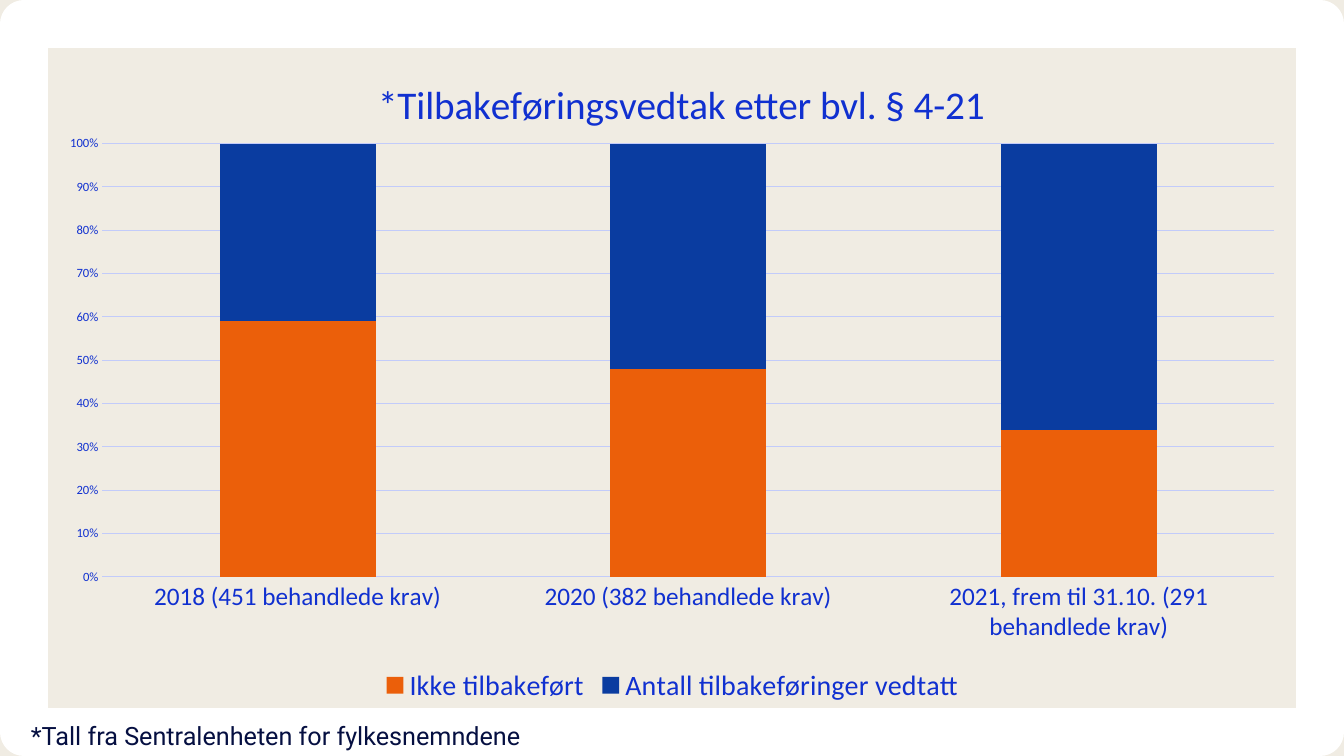
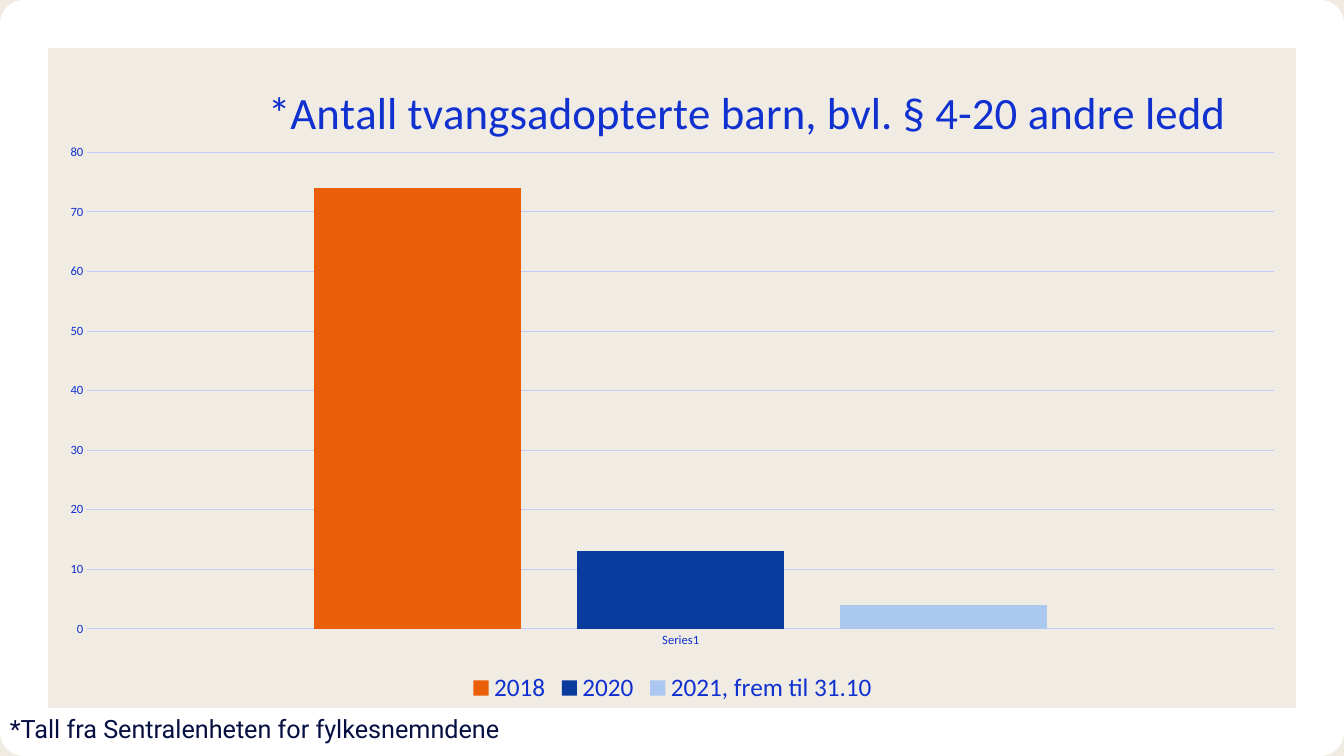
from dataclasses import dataclass

from lxml import etree
from pptx import Presentation
from pptx.chart.data import CategoryChartData
from pptx.dml.color import RGBColor
from pptx.enum.chart import XL_CHART_TYPE as ChartType
from pptx.enum.chart import XL_LEGEND_POSITION as LegendPosition
from pptx.enum.chart import XL_TICK_MARK as TickMark
from pptx.enum.shapes import MSO_SHAPE as Preset
from pptx.enum.text import MSO_AUTO_SIZE as AutoSize
from pptx.oxml.ns import qn
from pptx.util import Cm, Pt


@dataclass(frozen=True)
class Theme:
    paper: RGBColor = RGBColor.from_string("F0ECE3")
    frame: RGBColor = RGBColor.from_string("FFFFFF")
    ink: RGBColor = RGBColor.from_string("050F41")
    label: RGBColor = RGBColor.from_string("1030D0")
    grid: RGBColor = RGBColor.from_string("C2CBFA")
    series: tuple = tuple(map(RGBColor.from_string, ("EB5F0A", "0A3CA0", "AAC8F0")))
    chart_font: str = "Calibri"
    note_font: str = "Roboto"
    tick_size: int = 9
    note_size: int = 18
    frame_width: int = 34
    hairline: float = 0.75


@dataclass(frozen=True)
class Box:
    left: int
    top: int
    width: int = 0
    height: int = 0


@dataclass(frozen=True)
class ChartPage:
    """What one chart slide says; title_box and plot_box are relative to the chart."""
    kind: ChartType
    title: str
    categories: tuple
    series: dict
    gap: int
    overlap: int
    number_format: str
    title_size: int
    category_size: int
    legend_size: int
    title_box: Box
    plot_box: Box
    note_box: Box


THEME = Theme()
SLIDE = Box(0, 0, Cm(33.87), Cm(19.05))
CHART = Box(Cm(1.15), Cm(1.2), Cm(31.6), Cm(16.65))
NOTE = "*Tall fra Sentralenheten for fylkesnemndene"

PAGES = (
    ChartPage(
        kind=ChartType.COLUMN_STACKED_100,
        title="*Tilbakeføringsvedtak etter bvl. § 4-21",
        categories=(
            "2018 (451 behandlede krav)",
            "2020 (382 behandlede krav)",
            "2021, frem til 31.10. (291 behandlede krav)",
        ),
        series={
            "Ikke tilbakeført": (59, 48, 34),
            "Antall tilbakeføringer vedtatt": (41, 52, 66),
        },
        gap=150, overlap=100, number_format="0%",
        title_size=28, category_size=18, legend_size=20,
        title_box=Box(Cm(8.2), Cm(0.6)),
        plot_box=Box(Cm(1.43), Cm(2.42), Cm(29.53), Cm(10.92)),
        note_box=Box(Cm(0.53), Cm(18.03), Cm(16.95), Cm(1.02)),
    ),
    ChartPage(
        kind=ChartType.COLUMN_CLUSTERED,
        title="*Antall tvangsadopterte barn, bvl. § 4-20 andre ledd",
        categories=("Series1",),
        series={"2018": (74,), "2020": (13,), "2021, frem til 31.10": (4,)},
        gap=219, overlap=-27, number_format="General",
        title_size=32, category_size=9, legend_size=18,
        title_box=Box(Cm(5.4), Cm(0.65)),
        plot_box=Box(Cm(1.05), Cm(2.64), Cm(29.91), Cm(12.01)),
        note_box=Box(Cm(0), Cm(17.86), Cm(16.95), Cm(1.02)),
    ),
)


def style_font(font, size, color=THEME.label, name=THEME.chart_font):
    font.size = Pt(size)
    font.name = name
    font.bold = False
    font.color.rgb = color


def style_line(line, color=THEME.grid, width=THEME.hairline):
    line.color.rgb = color
    line.width = Pt(width)


def make_layout(element, box, inner=False):
    """Fill a c:layout element with fractions of the chart's size."""
    manual = etree.SubElement(element, qn("c:manualLayout"))
    settings = [("layoutTarget", "inner")] if inner else []
    settings += [("xMode", "edge"), ("yMode", "edge"),
                 ("x", box.left / CHART.width), ("y", box.top / CHART.height)]
    if inner:
        settings += [("w", box.width / CHART.width), ("h", box.height / CHART.height)]
    for tag, value in settings:
        etree.SubElement(manual, qn(f"c:{tag}")).set("val", str(value))


def new_layout(parent, position):
    for old in parent.findall(qn("c:layout")):
        parent.remove(old)
    layout = etree.Element(qn("c:layout"))
    parent.insert(position, layout)
    return layout


def add_chart_title(chart, page):
    chart.has_title = True
    title = chart.chart_title
    title.include_in_layout = False
    run = title.text_frame.paragraphs[0].add_run()
    run.text = page.title
    style_font(run.font, page.title_size)
    make_layout(new_layout(title._element, 1), page.title_box)


def style_axes(chart, page):
    category_axis, value_axis = chart.category_axis, chart.value_axis
    for axis, size in ((category_axis, page.category_size),
                       (value_axis, THEME.tick_size)):
        axis.major_tick_mark = axis.minor_tick_mark = TickMark.NONE
        style_font(axis.tick_labels.font, size)
    category_axis.has_major_gridlines = False
    style_line(category_axis.format.line)
    value_axis.has_major_gridlines = True
    style_line(value_axis.major_gridlines.format.line)
    value_axis.format.line.fill.background()
    value_axis.tick_labels.number_format = page.number_format
    value_axis.tick_labels.number_format_is_linked = False


def style_columns(plot, page):
    plot.gap_width = page.gap
    plot.overlap = page.overlap
    plot.vary_by_categories = False
    for series, color in zip(plot.series, THEME.series):
        series.format.fill.solid()
        series.format.fill.fore_color.rgb = color


def add_legend(chart, size):
    chart.has_legend = True
    chart.legend.position = LegendPosition.BOTTOM
    chart.legend.include_in_layout = False
    style_font(chart.legend.font, size)


def add_column_chart(slide, page, box):
    data = CategoryChartData()
    data.categories = page.categories
    for name, values in page.series.items():
        data.add_series(name, values)
    chart = slide.shapes.add_chart(
        page.kind, box.left, box.top, box.width, box.height, data).chart
    style_font(chart.font, 10, THEME.ink)
    add_chart_title(chart, page)
    style_axes(chart, page)
    style_columns(chart.plots[0], page)
    add_legend(chart, page.legend_size)
    plot_area = chart._chartSpace.find(f".//{qn('c:plotArea')}")
    make_layout(new_layout(plot_area, 0), page.plot_box, inner=True)


def add_note(slide, box):
    shape = slide.shapes.add_textbox(box.left, box.top, box.width, box.height)
    frame = shape.text_frame
    frame.word_wrap = True
    frame.auto_size = AutoSize.SHAPE_TO_FIT_TEXT
    run = frame.paragraphs[0].add_run()
    run.text = NOTE
    style_font(run.font, THEME.note_size, THEME.ink, THEME.note_font)


def add_frame(slide, layout, box):
    """Draw the white border inside box and hand it over to the layout."""
    inset = Pt(THEME.frame_width / 2)
    shape = slide.shapes.add_shape(
        Preset.RECTANGLE, box.left + inset, box.top + inset,
        box.width - 2 * inset, box.height - 2 * inset)
    shape.shadow.inherit = False
    shape.fill.background()
    style_line(shape.line, THEME.frame, THEME.frame_width)
    layout.shapes._spTree.append(shape._element)


def add_chart_slide(presentation, layout, page):
    slide = presentation.slides.add_slide(layout)
    add_column_chart(slide, page, CHART)
    add_note(slide, page.note_box)
    return slide


def main():
    presentation = Presentation()
    presentation.slide_width = SLIDE.width
    presentation.slide_height = SLIDE.height
    background = presentation.slide_master.background.fill
    background.solid()
    background.fore_color.rgb = THEME.paper
    layout = presentation.slide_layouts.get_by_name("Blank")
    slides = [add_chart_slide(presentation, layout, page) for page in PAGES]
    add_frame(slides[0], layout, SLIDE)
    presentation.save("out.pptx")


if __name__ == "__main__":
    main()
